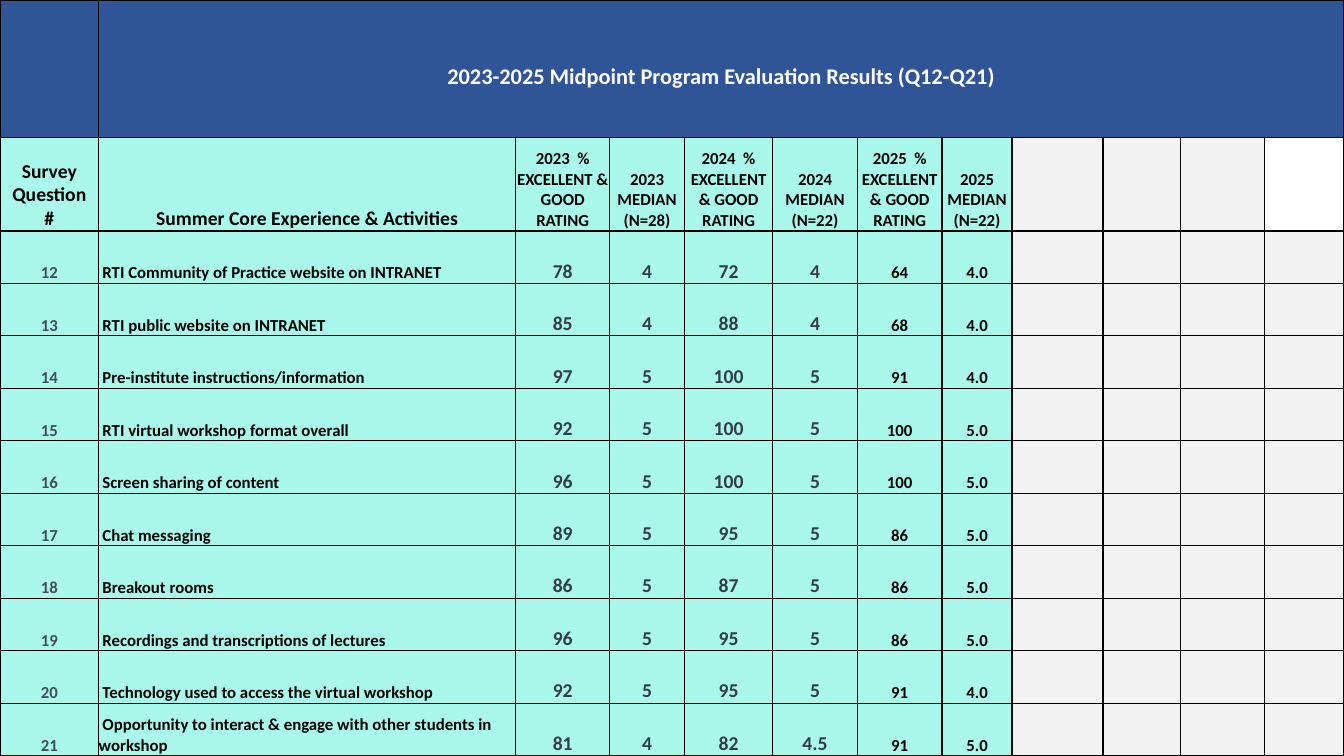
import dataclasses

import lxml.etree
import pptx
import pptx.dml.color
import pptx.enum.text
import pptx.oxml
import pptx.oxml.ns
import pptx.util


@dataclasses.dataclass(frozen=True)
class Theme:
    font: str = "Calibri"
    banner: str = "2F5597"
    mint: str = "AAF7EB"
    spare: str = "F2F2F2"
    white: str = "FFFFFF"
    black: str = "000000"
    number: str = "424E59"
    score: str = "333D48"
    title_size: float = 16
    large_size: float = 14
    small_size: float = 12
    median_alpha: int = 79
    row_alpha: int = 40
    border: float = 1


THEME = Theme()
PAGE_WIDTH, PAGE_HEIGHT = 960, 540
COLUMN_WIDTHS = [70.5, 298, 67, 53.5, 63, 60.5, 60.5, 50, 65, 55.5, 60, 56.5]
BANNER_HEIGHT, HEADING_HEIGHT = 98.5, 66.5
FIRST_QUESTION = 12
FIRST_SPARE_COLUMN = 8
CENTER = pptx.enum.text.PP_ALIGN.CENTER
LEFT = pptx.enum.text.PP_ALIGN.LEFT

HEADINGS = [
    "2023  % EXCELLENT & GOOD RATING",
    "2023 MEDIAN (N=28)",
    "2024  % EXCELLENT & GOOD RATING",
    "2024 MEDIAN (N=22)",
    "2025  % EXCELLENT & GOOD RATING",
    "2025 MEDIAN (N=22)",
]
RESULTS = [
    ("RTI Community of Practice website on INTRANET", "78", "4", "72", "4", "64", "4.0"),
    ("RTI public website on INTRANET", "85", "4", "88", "4", "68", "4.0"),
    ("Pre-institute instructions/information", "97", "5", "100", "5", "91", "4.0"),
    ("RTI virtual workshop format overall", "92", "5", "100", "5", "100", "5.0"),
    ("Screen sharing of content", "96", "5", "100", "5", "100", "5.0"),
    ("Chat messaging", "89", "5", "95", "5", "86", "5.0"),
    ("Breakout rooms", "86", "5", "87", "5", "86", "5.0"),
    ("Recordings and transcriptions of lectures", "96", "5", "95", "5", "86", "5.0"),
    ("Technology used to access the virtual workshop", "92", "5", "95", "5", "91", "4.0"),
    ("Opportunity to interact & engage with other students in workshop",
     "81", "4", "82", "4.5", "91", "5.0"),
]


def paint_cell(cell, color, alpha=100):
    cell.fill.solid()
    cell.fill.fore_color.rgb = pptx.dml.color.RGBColor.from_string(color)
    if alpha < 100:
        shade = cell.fill._xPr.find(".//" + pptx.oxml.ns.qn("a:srgbClr"))
        lxml.etree.SubElement(shade, pptx.oxml.ns.qn("a:alpha"), val=str(alpha * 1000))


def outline_cell(cell):
    properties = cell._tc.get_or_add_tcPr()
    for side in ("lnL", "lnR", "lnT", "lnB"):
        properties.append(pptx.oxml.parse_xml(
            f'<a:{side} {pptx.oxml.ns.nsdecls("a")} w="{pptx.util.Pt(THEME.border)}">'
            f'<a:solidFill><a:srgbClr val="{THEME.black}"/></a:solidFill></a:{side}>'))


def write_cell(cell, text, size=THEME.small_size, color=THEME.black,
               align=CENTER, bottom=0, side=0, indent=0):
    cell.vertical_anchor = pptx.enum.text.MSO_ANCHOR.BOTTOM
    cell.margin_left = cell.margin_right = cell.margin_top = pptx.util.Pt(side)
    cell.margin_bottom = pptx.util.Pt(bottom)
    cell.text_frame.text = text
    for para in cell.text_frame.paragraphs:
        para.alignment = align
        if indent:
            para._p.get_or_add_pPr().set("indent", str(pptx.util.Pt(indent)))
        for span in para.runs:
            span.font.name = THEME.font
            span.font.size = pptx.util.Pt(size)
            span.font.bold = True
            span.font.color.rgb = pptx.dml.color.RGBColor.from_string(color)


def fill_banner(table):
    last = len(COLUMN_WIDTHS) - 1
    for column in (0, 1):
        paint_cell(table.cell(0, column), THEME.banner)
    title = table.cell(0, 1)
    title.merge(table.cell(0, last))
    write_cell(title, "2023-2025 Midpoint Program Evaluation Results (Q12-Q21)",
               size=THEME.title_size, color=THEME.white, bottom=34)


def fill_headings(table):
    for column, text in enumerate(("Survey\nQuestion\n#", "Summer Core Experience & Activities")):
        cell = table.cell(1, column)
        paint_cell(cell, THEME.mint)
        write_cell(cell, text, size=THEME.large_size)
    for column, text in enumerate(HEADINGS, start=2):
        cell = table.cell(1, column)
        paint_cell(cell, THEME.mint, THEME.median_alpha)
        write_cell(cell, text)


def fill_results(table):
    for row, (activity, *scores) in enumerate(RESULTS, start=2):
        for column in range(FIRST_SPARE_COLUMN):
            paint_cell(table.cell(row, column), THEME.mint, THEME.row_alpha)
        write_cell(table.cell(row, 0), str(FIRST_QUESTION + row - 2), color=THEME.number)
        write_cell(table.cell(row, 1), activity, align=LEFT, indent=2.7)
        for column, score in enumerate(scores, start=2):
            earlier_year = column < 6
            write_cell(table.cell(row, column), score,
                       size=THEME.large_size if earlier_year else THEME.small_size,
                       color=THEME.score if earlier_year else THEME.black,
                       side=0.7 if earlier_year else 0)


def fill_spare_columns(table):
    last = len(COLUMN_WIDTHS) - 1
    for row in range(1, len(RESULTS) + 2):
        for column in range(FIRST_SPARE_COLUMN, last + 1):
            if (row, column) == (1, last):
                table.cell(row, column).fill.background()
            else:
                paint_cell(table.cell(row, column), THEME.spare)


def add_results_table(page, left, top, width, height):
    frame = page.shapes.add_table(len(RESULTS) + 2, len(COLUMN_WIDTHS),
                                  *map(pptx.util.Pt, (left, top, width, height)))
    table = frame.table
    table.first_row = table.horz_banding = False
    for column, share in zip(table.columns, COLUMN_WIDTHS):
        column.width = pptx.util.Pt(width * share / sum(COLUMN_WIDTHS))
    result_height = (height - BANNER_HEIGHT - HEADING_HEIGHT) / len(RESULTS)
    heights = [BANNER_HEIGHT, HEADING_HEIGHT] + [result_height] * len(RESULTS)
    for row, row_height in zip(table.rows, heights):
        row.height = pptx.util.Pt(row_height)
    for cell in table.iter_cells():
        outline_cell(cell)
    fill_banner(table)
    fill_headings(table)
    fill_results(table)
    fill_spare_columns(table)


def main():
    deck = pptx.Presentation()
    deck.slide_width = pptx.util.Pt(PAGE_WIDTH)
    deck.slide_height = pptx.util.Pt(PAGE_HEIGHT)
    page = deck.slides.add_slide(deck.slide_layouts[6])
    add_results_table(page, 0, 0, PAGE_WIDTH, PAGE_HEIGHT)
    deck.save("out.pptx")


if __name__ == "__main__":
    main()
